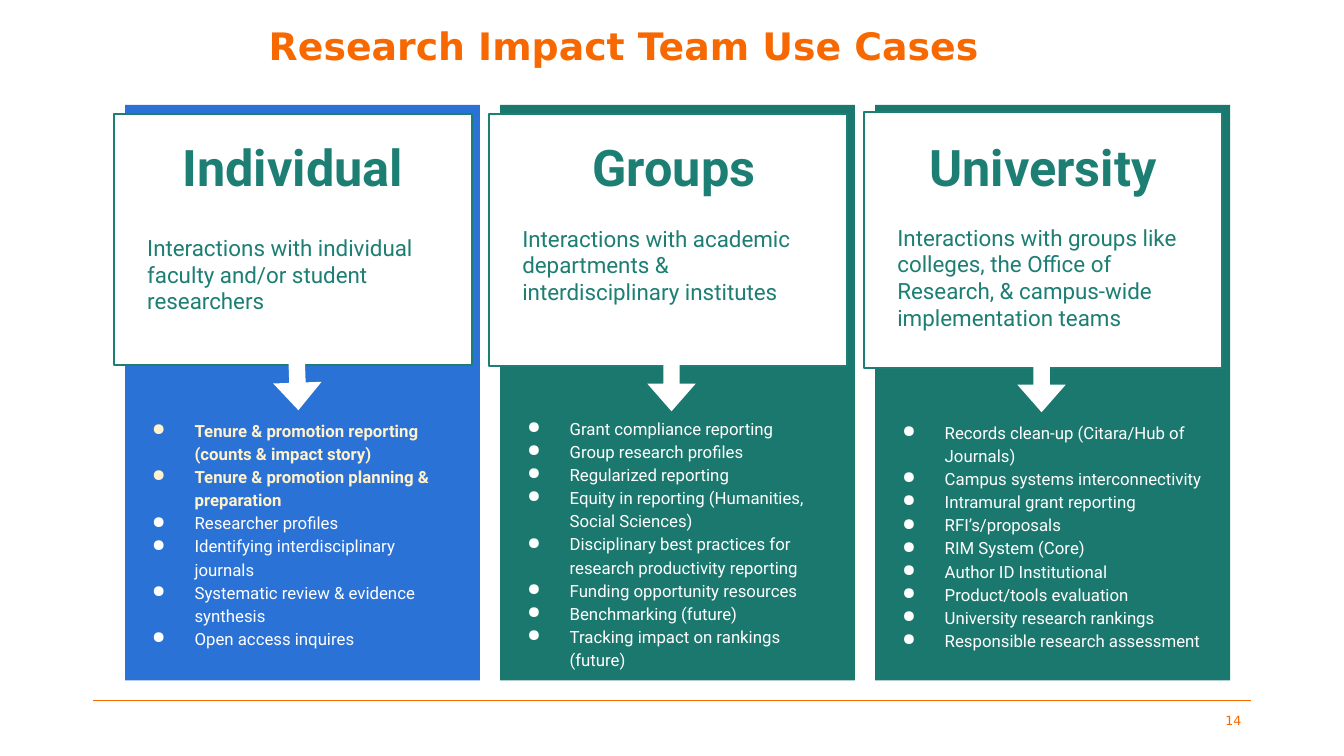
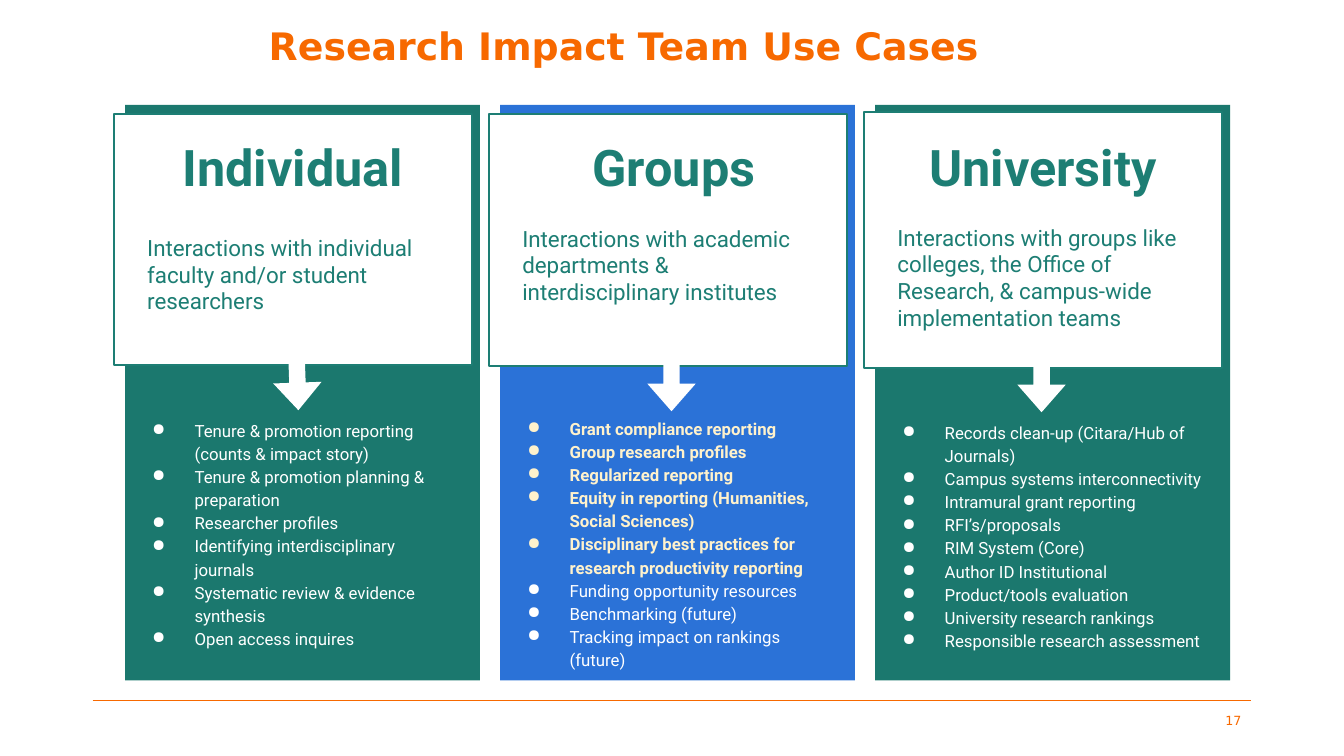
"""Build the two use-case slides of the research impact team."""
from dataclasses import dataclass

from lxml.etree import SubElement
from pptx import Presentation
from pptx.dml.color import RGBColor
from pptx.enum.shapes import MSO_CONNECTOR as CONNECTOR, MSO_SHAPE as SHAPE
from pptx.enum.text import MSO_ANCHOR as ANCHOR, PP_ALIGN as ALIGN
from pptx.oxml.ns import qn
from pptx.util import Inches, Pt

TITLE = "Research Impact Team Use Cases"

COLUMNS = [
    {
        "heading": "Individual",
        "body": "Interactions with individual faculty and/or student researchers",
        "items": [
            "Tenure & promotion reporting (counts & impact story)",
            "Tenure & promotion planning & preparation",
            "Researcher profiles",
            "Identifying interdisciplinary journals",
            "Systematic review & evidence synthesis",
            "Open access inquires",
        ],
        "card": (1.13, 2.49), "body_top": 2.19, "list_top": 4.01,
        "heading_shift": 0, "arrow": (1.82, 3.8, 88),
    },
    {
        "heading": "Groups",
        "body": "Interactions with academic departments & interdisciplinary institutes",
        "items": [
            "Grant compliance reporting",
            "Group research profiles",
            "Regularized reporting",
            "Equity in reporting (Humanities, Social Sciences)",
            "Disciplinary best practices for research productivity reporting",
            "Funding opportunity resources",
            "Benchmarking (future)",
            "Tracking impact on rankings (future)",
        ],
        "card": (1.13, 2.5), "body_top": 2.1, "list_top": 3.99,
        "heading_shift": 0.06, "arrow": (1.81, 3.81, 90),
    },
    {
        "heading": "University",
        "body": "Interactions with groups like colleges, the Office of Research, "
                "& campus-wide implementation teams",
        "items": [
            "Records clean-up (Citara/Hub of Journals)",
            "Campus systems interconnectivity",
            "Intramural grant reporting",
            "RFI’s/proposals",
            "RIM System (Core)",
            "Author ID Institutional",
            "Product/tools evaluation",
            "University research rankings",
            "Responsible research assessment",
        ],
        "card": (1.11, 2.54), "body_top": 2.09, "list_top": 4.03,
        "heading_shift": 0, "arrow": (1.76, 3.82, 90),
    },
]

SLIDES = [
    {"number": "14", "active": "Individual", "bold_items": 2},
    {"number": "17", "active": "Groups", "bold_items": 5},
]


@dataclass(frozen=True)
class Theme:
    """Colours, fonts and type sizes."""
    orange: str = "F76900"
    blue: str = "2B72D7"
    green: str = "1B786E"
    teal: str = "1D7E74"
    cream: str = "FFF2CC"
    white: str = "FFFFFF"
    title_font: str = "DejaVu Sans"
    text_font: str = "Roboto"
    title: int = 27
    heading: int = 36
    body: int = 16
    item: int = 12
    number: int = 9


T = Theme()
WIDTH, HEIGHT = 13.33, 7.5
MARGIN, RULE_Y = 0.92, 6.95
PITCH, CARD_LEFT, BAND_SHIFT = 3.72, 1.13, 0.11
BAND_TOP, BAND_W, BAND_H = 1.04, 3.52, 5.71
CARD_W, PAD = 3.55, 0.2
HEADING_TOP, HEADING_H = 1.22, 0.95
ARROW_W, ARROW_H = 0.54, 0.48
INSET, BULLET_LEFT, BULLET_HANG = 0.13, 0.67, 0.42


def add_shape(slide, kind, box, fill, line=None):
    """Draw a filled preset shape."""
    s = slide.shapes.add_shape(kind, *map(Inches, box))
    s.shadow.inherit = False
    s.fill.solid()
    s.fill.fore_color.rgb = RGBColor.from_string(fill)
    if line:
        s.line.color.rgb = RGBColor.from_string(line)
        s.line.width = Pt(1.5)
    else:
        s.line.fill.background()
    return s


def add_text(slide, box, lines, font, size, color, bold=False, align=ALIGN.LEFT,
             anchor=ANCHOR.TOP, insets=(INSET, INSET)):
    """Write one paragraph per line and return the paragraphs."""
    tf = slide.shapes.add_textbox(*map(Inches, box)).text_frame
    tf.word_wrap = True
    tf.vertical_anchor = anchor
    tf.margin_left = tf.margin_right = Inches(insets[0])
    tf.margin_top = tf.margin_bottom = Inches(insets[1])
    for i, line in enumerate(lines):
        p = tf.add_paragraph() if i else tf.paragraphs[0]
        p.alignment = align
        r = p.add_run()
        r.text = line
        for name, value in {"name": font, "size": Pt(size), "bold": bold}.items():
            setattr(r.font, name, value)
        r.font.color.rgb = RGBColor.from_string(color)
    return tf.paragraphs


def add_bullet(p, color):
    """Give a paragraph a hanging round bullet."""
    p.line_spacing = 1.15
    pPr = p._p.get_or_add_pPr()
    pPr.set("marL", str(Inches(BULLET_LEFT)))
    pPr.set("indent", str(-Inches(BULLET_HANG)))
    SubElement(SubElement(pPr, qn("a:buClr")), qn("a:srgbClr")).set("val", color)
    SubElement(pPr, qn("a:buChar")).set("char", "●")


def add_frame(slide, number):
    """Draw the title, the footer rule and the slide number."""
    rule = slide.shapes.add_connector(
        CONNECTOR.STRAIGHT, *map(Inches, (MARGIN, RULE_Y, WIDTH - MARGIN, RULE_Y)))
    rule.line.color.rgb = RGBColor.from_string(T.orange)
    rule.line.width = Pt(0.75)
    SubElement(rule._element.spPr, qn("a:effectLst"))
    frame = {"font": T.title_font, "color": T.orange,
             "anchor": ANCHOR.MIDDLE, "insets": (0.1, 0.05)}
    title = add_text(slide, (MARGIN, 0, 10.53, 0.96), [TITLE],
                     size=T.title, bold=True, align=ALIGN.CENTER, **frame)
    title[0].line_spacing = 0.9
    add_text(slide, (WIDTH - MARGIN - 3, RULE_Y, 3, 0.4), [number],
             size=T.number, align=ALIGN.RIGHT, **frame)


def add_column(slide, index, column, active, bold_items):
    """Draw a band with its card, arrow and bulleted list."""
    left = CARD_LEFT + index * PITCH
    inner, inner_w = left + PAD, CARD_W - 2 * PAD
    card_top, card_h = column["card"]
    add_shape(slide, SHAPE.RECTANGLE, (left + BAND_SHIFT, BAND_TOP, BAND_W, BAND_H),
              T.blue if active else T.green)
    add_shape(slide, SHAPE.RECTANGLE, (left, card_top, CARD_W, card_h), T.white, T.teal)
    add_text(slide, (inner, column["body_top"], inner_w, 1.16), [column["body"]],
             T.text_font, T.body, T.teal)
    add_text(slide, (inner + column["heading_shift"], HEADING_TOP, inner_w, HEADING_H),
             [column["heading"]], T.text_font, T.heading, T.teal, True, ALIGN.CENTER)

    dx, center_y, angle = column["arrow"]
    arrow = add_shape(slide, SHAPE.RIGHT_ARROW,
                      (left + dx - ARROW_W / 2, center_y - ARROW_H / 2, ARROW_W, ARROW_H),
                      T.white)
    arrow.rotation = angle
    arrow.adjustments[0], arrow.adjustments[1] = 0.34, 0.57

    items = add_text(slide, (left, column["list_top"], BAND_W, 2.73), column["items"],
                     T.text_font, T.item, T.white)
    for i, p in enumerate(items):
        strong = active and i < bold_items
        color = T.cream if strong else T.white
        add_bullet(p, color)
        p.runs[0].font.bold = strong
        p.runs[0].font.color.rgb = RGBColor.from_string(color)


def main():
    """Build and save the deck."""
    prs = Presentation()
    prs.slide_width, prs.slide_height = Inches(WIDTH), Inches(HEIGHT)
    for page in SLIDES:
        slide = prs.slides.add_slide(prs.slide_layouts[6])
        add_frame(slide, page["number"])
        for i, column in enumerate(COLUMNS):
            add_column(slide, i, column, column["heading"] == page["active"],
                       page["bold_items"])
    prs.save("out.pptx")


if __name__ == "__main__":
    main()
